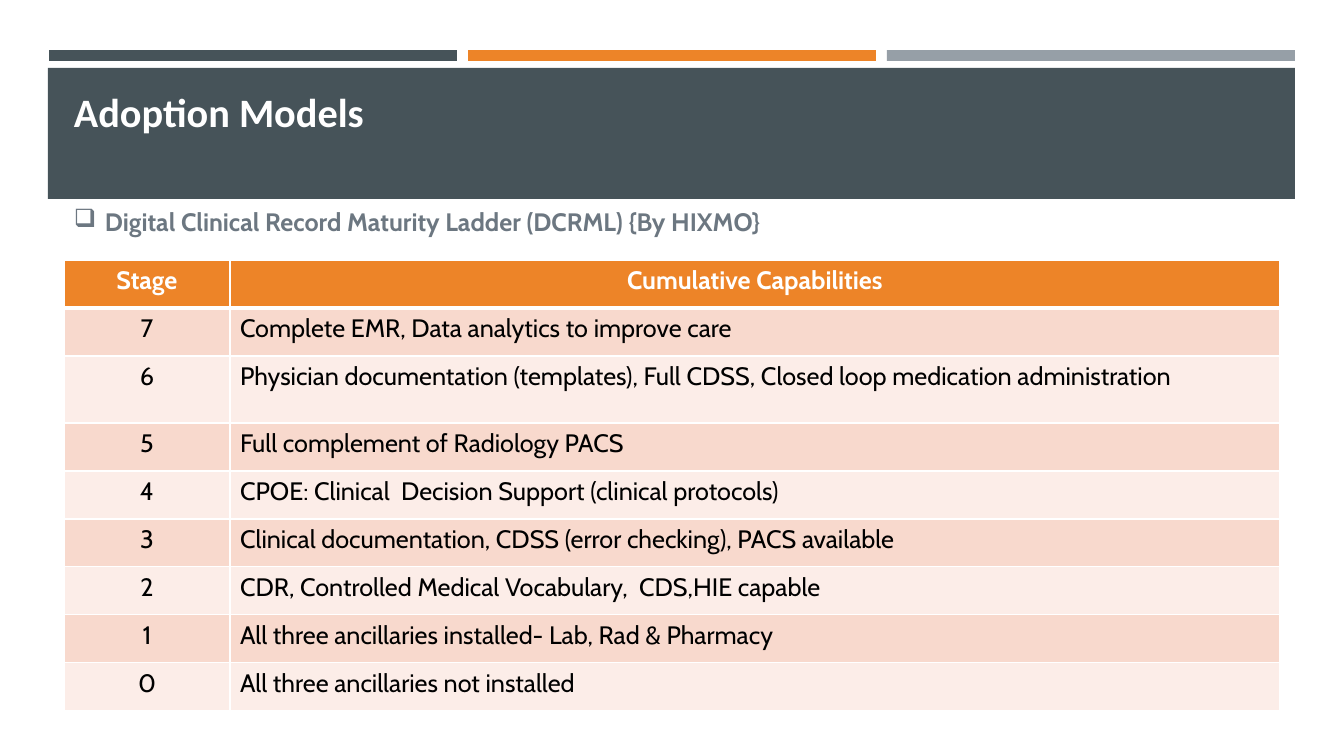
from dataclasses import dataclass
from lxml import etree
from pptx import Presentation
from pptx.dml.color import RGBColor
from pptx.enum.shapes import MSO_SHAPE
from pptx.enum.text import MSO_ANCHOR, PP_ALIGN
from pptx.oxml.ns import qn
from pptx.util import Emu, Pt

RECT = MSO_SHAPE.RECTANGLE
TOP = MSO_ANCHOR.TOP
LEFT, MID = PP_ALIGN.LEFT, PP_ALIGN.CENTER
SCALE = 914400 / 100.8


@dataclass(frozen=True)
class Theme:
    slate: str = "465359"
    orange: str = "ED8428"
    grey: str = "969FA7"
    muted: str = "6C7781"
    white: str = "FFFFFF"
    black: str = "000000"
    dark: str = "F8D9CD"
    pale: str = "FCEDE8"
    head: str = "Calibri"
    body: str = "Cabin"
    large: float = 28.8
    small: float = 18


@dataclass(frozen=True)
class Box:
    x: int
    y: int
    w: int
    h: int


@dataclass(frozen=True)
class Font:
    face: str
    size: float
    tint: str
    bold: bool = False


@dataclass(frozen=True)
class Row:
    stage: str
    text: str
    high: int = 48


THEME = Theme()
TITLE = Font(THEME.head, THEME.large, THEME.white, True)
LEAD = Font(THEME.body, THEME.small, THEME.muted, True)
HEAD = Font(THEME.body, THEME.small, THEME.white, True)
BODY = Font(THEME.body, THEME.small, THEME.black)

BARS = (THEME.slate, THEME.orange, THEME.grey)
COLS = (166, 1050)
ROWS = (
    Row("Stage", "Cumulative Capabilities"),
    Row("7", "Complete EMR, Data analytics to improve care"),
    Row("6", "Physician documentation (templates), Full CDSS, "
             "Closed loop medication administration", 67),
    Row("5", "Full complement of Radiology PACS"),
    Row("4", "CPOE: Clinical  Decision Support (clinical protocols)"),
    Row("3", "Clinical documentation, CDSS (error checking), PACS available"),
    Row("2", "CDR, Controlled Medical Vocabulary,  CDS,HIE capable"),
    Row("1", "All three ancillaries installed- Lab, Rad & Pharmacy"),
    Row("0", "All three ancillaries not installed"),
)


def px(count: int) -> Emu:
    return Emu(round(count * SCALE))


def place(box: Box) -> tuple[Emu, Emu, Emu, Emu]:
    return px(box.x), px(box.y), px(box.w), px(box.h)


def write(frame, text: str, font: Font, align=LEFT) -> None:
    frame.text = text
    line = frame.paragraphs[0]
    line.alignment = align
    for run in line.runs:
        run.font.name = font.face
        run.font.size = Pt(font.size)
        run.font.bold = font.bold
        run.font.color.rgb = RGBColor.from_string(font.tint)


def add_rect(slide, box: Box, tint: str) -> None:
    shape = slide.shapes.add_shape(RECT, *place(box))
    shape.shadow.inherit = False
    shape.fill.solid()
    shape.fill.fore_color.rgb = RGBColor.from_string(tint)
    shape.line.fill.background()


def add_text(slide, box: Box, text: str, font: Font, inset: int = 4):
    frame = slide.shapes.add_textbox(*place(box)).text_frame
    frame.word_wrap = True
    frame.vertical_anchor = TOP
    frame.margin_top = px(inset)
    write(frame, text, font)
    return frame


def add_mark(line, sign: str, indent: int) -> None:
    props = line._p.get_or_add_pPr()
    props.set("marL", str(px(indent)))
    props.set("indent", str(-px(indent)))
    etree.SubElement(props, qn("a:buChar")).set("char", sign)


def edge(cell, side: str, width: int) -> None:
    line = etree.SubElement(cell._tc.get_or_add_tcPr(), qn(f"a:ln{side}"))
    line.set("w", str(Pt(width)))
    fill = etree.SubElement(line, qn("a:solidFill"))
    etree.SubElement(fill, qn("a:srgbClr")).set("val", THEME.white)


def paint(cell, index: int) -> None:
    thick = {0: "B", 1: "T"}.get(index)
    for side in "LRTB":
        edge(cell, side, 3 if side == thick else 1)
    band = THEME.dark if index % 2 else THEME.pale
    cell.fill.solid()
    cell.fill.fore_color.rgb = RGBColor.from_string(band if index else THEME.orange)


def add_grid(slide, x: int, y: int) -> None:
    box = Box(x, y, sum(COLS), sum(row.high for row in ROWS))
    grid = slide.shapes.add_table(len(ROWS), len(COLS), *place(box)).table
    for col, width in zip(grid.columns, COLS):
        col.width = px(width)
    for index, row in enumerate(ROWS):
        grid.rows[index].height = px(row.high)
        font = BODY if index else HEAD
        for col, text in enumerate((row.stage, row.text)):
            cell = grid.cell(index, col)
            write(cell.text_frame, text, font, LEFT if index and col else MID)
            paint(cell, index)


def main() -> None:
    deck = Presentation()
    deck.slide_width, deck.slide_height = px(1344), px(756)
    slide = deck.slides.add_slide(deck.slide_layouts[6])
    for index, tint in enumerate(BARS):
        add_rect(slide, Box(49 + 419 * index, 50, 408, 11), tint)
    add_rect(slide, Box(48, 68, 1247, 131), THEME.slate)
    add_text(slide, Box(64, 78, 1216, 112), "Adoption Models", TITLE, 9)
    add_grid(slide, 64, 260)
    lead = "Digital Clinical Record Maturity Ladder (DCRML) {By HIXMO}"
    frame = add_text(slide, Box(64, 202, 885, 40), lead, LEAD)
    add_mark(frame.paragraphs[0], "❑", 31)
    deck.save("out.pptx")


if __name__ == "__main__":
    main()
